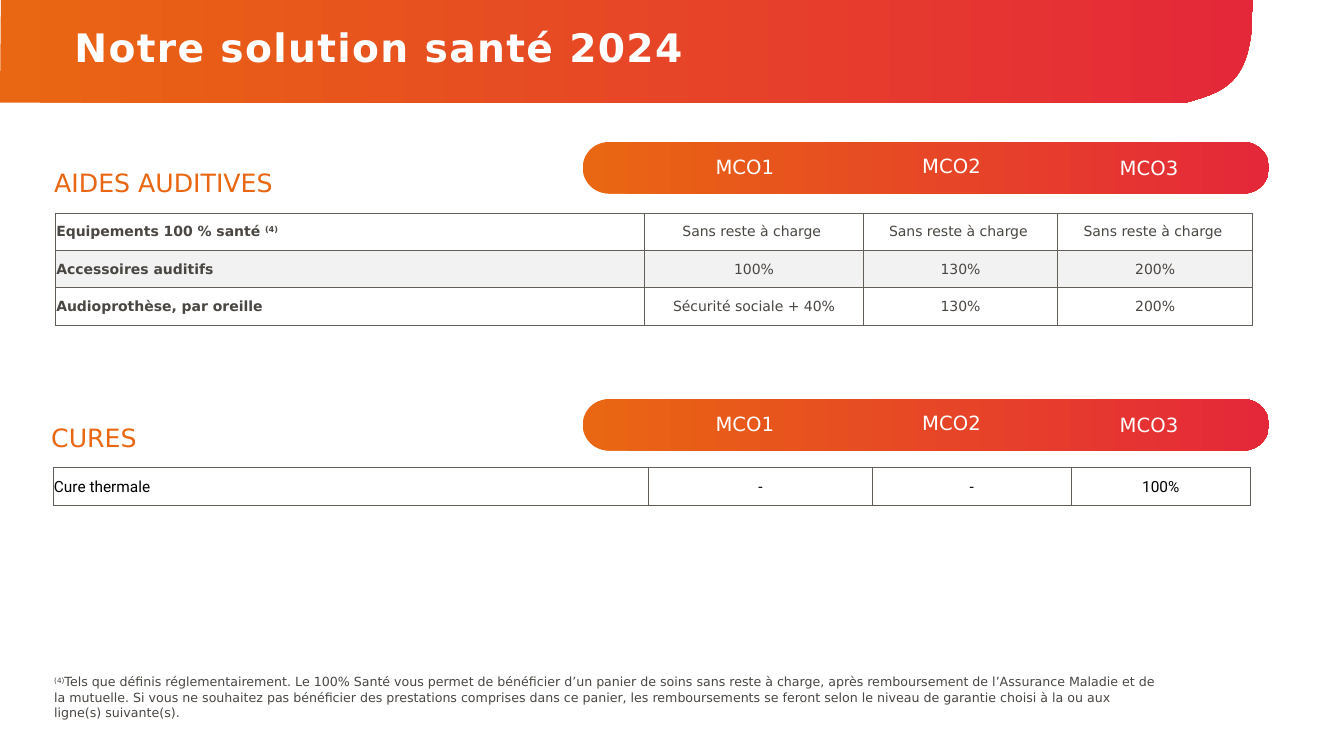
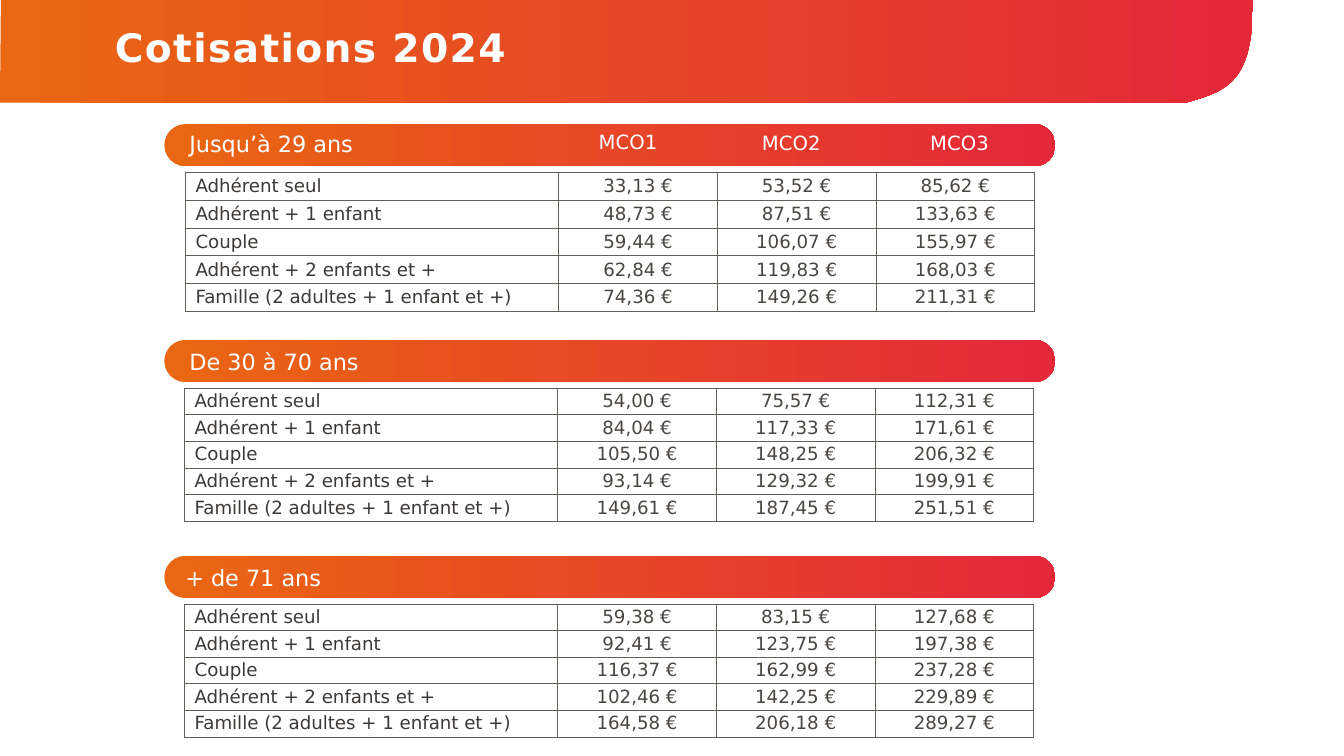
from lxml import etree
from pptx import Presentation
from pptx.dml.color import RGBColor
from pptx.enum.shapes import MSO_SHAPE
from pptx.enum.text import MSO_ANCHOR, MSO_AUTO_SIZE, PP_ALIGN
from pptx.oxml.ns import qn
from pptx.util import Pt

ROUNDED = MSO_SHAPE.ROUNDED_RECTANGLE
MIDDLE = MSO_ANCHOR.MIDDLE
NO_FIT = MSO_AUTO_SIZE.NONE
GROW = MSO_AUTO_SIZE.SHAPE_TO_FIT_TEXT
LEFT, CENTER = PP_ALIGN.LEFT, PP_ALIGN.CENTER

ORANGE = RGBColor(0xE9, 0x66, 0x12)
RED = RGBColor(0xE4, 0x28, 0x39)
WHITE = RGBColor(0xFF, 0xFF, 0xFF)
BLACK = RGBColor(0, 0, 0)
GREY = RGBColor(0xF2, 0xF2, 0xF2)
TEXT = RGBColor(0x4A, 0x46, 0x42)
DARK = RGBColor(0x3C, 0x39, 0x37)
BORDER = RGBColor(0x63, 0x5E, 0x58)

FONT = "DejaVu Sans"
NOTE_MARK = "(4)"
PLANS = ("MCO1", "MCO2", "MCO3")
PLAN_WIDTHS = (129.6, 136.8, 136.8)


class Deck:
    def __init__(self):
        self.prs = Presentation()
        self.prs.slide_width, self.prs.slide_height = Pt(960), Pt(540)
        self.layout = self.prs.slide_layouts[5]
        self.slide = None

    def add_slide(self, title, left, top, width, height):
        first = self.slide is None
        self.slide = self.prs.slides.add_slide(self.layout)
        if first:
            self.layout_band()
        sp = self.slide.shapes.title
        sp.left, sp.top, sp.width, sp.height = Pt(left), Pt(top), Pt(width), Pt(height)
        tf = sp.text_frame
        tf.word_wrap, tf.auto_size, tf.vertical_anchor = True, NO_FIT, MIDDLE
        p = tf.paragraphs[0]
        self.fill_paragraph(p, title, 28, WHITE, bold=True)
        p.line_spacing = 0.9
        p.runs[0].font._element.set("spc", "100")

    def layout_band(self):
        curve = ((846.7, 73.4), (877.7, 64.8), (895, 58.3), (895, 0))
        steps = 24
        points = []
        for i in range(steps + 1):
            t = i / steps
            weights = ((1 - t) ** 3, 3 * t * (1 - t) ** 2, 3 * t * t * (1 - t), t ** 3)
            points.append(tuple(Pt(sum(w * c[axis] for w, c in zip(weights, curve)))
                                for axis in (0, 1)))
        points.append((Pt(0.7), Pt(-0.7)))
        builder = self.slide.shapes.build_freeform(Pt(0), Pt(73.4))
        builder.add_line_segments(points, close=True)
        sp = builder.convert_to_shape()
        self.gradient(sp)
        self.layout.shapes.element.insert(2, sp.element)

    def gradient(self, sp):
        sp.shadow.inherit = False
        sp.line.fill.background()
        sp.fill.gradient()
        sp.fill.gradient_angle = 0
        for stop, color in zip(sp.fill.gradient_stops, (ORANGE, RED)):
            stop.color.rgb = color

    def fill_paragraph(self, p, text, size, color, align=LEFT, bold=False, font=FONT):
        p.alignment = align
        p.font.name, p.font.size, p.font.bold = font, Pt(size), bold
        p.font.color.rgb = color
        for part in filter(None, text.partition(NOTE_MARK)):
            r = p.add_run()
            r.text = part
            if part == NOTE_MARK:
                r.font._element.set("baseline", "30000")

    def text(self, text, left, top, width, height, size, color, align=LEFT):
        sp = self.slide.shapes.add_textbox(Pt(left), Pt(top), Pt(width), Pt(height))
        tf = sp.text_frame
        tf.word_wrap, tf.auto_size = True, GROW
        self.fill_paragraph(tf.paragraphs[0], text, size, color, align)

    def pill(self, left, top, width, height):
        sp = self.slide.shapes.add_shape(ROUNDED, Pt(left), Pt(top), Pt(width), Pt(height))
        sp.adjustments[0] = 0.5
        self.gradient(sp)

    def plans(self, lefts, tops):
        for name, left, top, width in zip(PLANS, lefts, tops, PLAN_WIDTHS):
            self.text(name, left, top, width, 24.5, 14, WHITE, CENTER)

    def table(self, rows, left, top, widths, row_height, margins, size,
              label_color=TEXT, value_color=TEXT, bold=False, font=FONT, stripe=WHITE):
        frame = self.slide.shapes.add_table(len(rows), len(widths), Pt(left), Pt(top),
                                            Pt(sum(widths)), Pt(row_height * len(rows)))
        table = frame.table
        table.first_row = table.horz_banding = False
        for column, width in zip(table.columns, widths):
            column.width = Pt(width)
        for i, values in enumerate(rows):
            table.rows[i].height = Pt(row_height)
            for j, value in enumerate(values):
                cell = table.cell(i, j)
                cell.margin_left = cell.margin_right = Pt(margins[0])
                cell.margin_top, cell.margin_bottom = Pt(margins[1]), Pt(0)
                cell.vertical_anchor = MIDDLE
                self.borders(cell)
                cell.fill.solid()
                cell.fill.fore_color.rgb = stripe if i % 2 else WHITE
                self.fill_paragraph(cell.text_frame.paragraphs[0], value, size,
                                    value_color if j else label_color,
                                    CENTER if j else LEFT, bold and j == 0, font)

    def borders(self, cell):
        tc_pr = cell._tc.get_or_add_tcPr()
        for side in ("a:lnL", "a:lnR", "a:lnT", "a:lnB"):
            ln = etree.SubElement(tc_pr, qn(side), w=str(Pt(0.5)))
            fill = etree.SubElement(ln, qn("a:solidFill"))
            etree.SubElement(fill, qn("a:srgbClr"), val=str(BORDER))


def health_slide(deck):
    deck.add_slide("Notre solution santé 2024", 46, 9.4, 746.6, 52.6)
    for top in (101.5, 285.1):
        deck.pill(416.2, top, 490.3, 36.7)
        deck.plans((467.3, 611.3, 752.4), (top + 5.8, top + 5.1, top + 6.5))
    deck.text("AIDES AUDITIVES", 31.7, 115.9, 280.8, 28.8, 18, ORANGE)
    covered = "Sans reste à charge "
    deck.table([("Equipements 100 % santé (4)", covered, covered, covered),
                ("Accessoires auditifs", "100%", "130%", "200%"),
                ("Audioprothèse, par oreille", "Sécurité sociale + 40%", "130%", "200%")],
               39.5, 152.2, (420.8, 156.6, 138.6, 139.3), 26.65, (0.72, 0.72), 10,
               bold=True, stripe=GREY)
    deck.text("CURES", 29.5, 298.1, 280.8, 28.8, 18, ORANGE)
    deck.table([("Cure thermale", "-", "-", "100%")],
               37.8, 333.8, (425.4, 160, 142.1, 127.9), 27, (0.72, 0.72), 11,
               BLACK, BLACK, font="Roboto")
    deck.text("(4)Tels que définis réglementairement. Le 100% Santé vous permet de bénéficier "
              "d’un panier de soins sans reste à charge, après remboursement de l’Assurance "
              "Maladie et de la mutuelle. Si vous ne souhaitez pas bénéficier des prestations "
              "comprises dans ce panier, les remboursements se feront selon le niveau de "
              "garantie choisi à la ou aux ligne(s) suivante(s).",
              31.7, 478.1, 801.4, 40.3, 9, TEXT)


def rates_slide(deck):
    deck.add_slide("Cotisations 2024", 74.9, -16.6, 653.8, 104.4)
    members = ("Adhérent seul", "Adhérent + 1 enfant", "Couple",
               "Adhérent + 2 enfants et +", "Famille (2 adultes + 1 enfant et +)")
    groups = (
        ("Jusqu’à 29 ans", 128.2, 0.7, 132.5, 19.9,
         (("33,13", "53,52", "85,62"), ("48,73", "87,51", "133,63"),
          ("59,44", "106,07", "155,97"), ("62,84", "119,83", "168,03"),
          ("74,36", "149,26", "211,31"))),
        ("De 30 à 70 ans", 128.2, 2.2, 131.8, 19,
         (("54,00", "75,57", "112,31"), ("84,04", "117,33", "171,61"),
          ("105,50", "148,25", "206,32"), ("93,14", "129,32", "199,91"),
          ("149,61", "187,45", "251,51"))),
        ("+ de 71 ans", 125.3, 2.2, 131.8, 19,
         (("59,38", "83,15", "127,68"), ("92,41", "123,75", "197,38"),
          ("116,37", "162,99", "237,28"), ("102,46", "142,25", "229,89"),
          ("164,58", "206,18", "289,27"))),
    )
    for i, (age, age_left, age_drop, table_left, row_height, rates) in enumerate(groups):
        top = 88.6 + 154.2 * i
        deck.pill(117.4, top, 636.5, 30.2)
        deck.text(age, age_left, top + age_drop, 170.6, 26.6, 16, WHITE)
        rows = [(member, *(f"{rate} €" for rate in line))
                for member, line in zip(members, rates)]
        deck.table(rows, table_left, top + 34.4, (266.6, 113.3, 113.3, 113.3),
                   row_height, (7.2, 0), 13, label_color=DARK)
    deck.plans((383.8, 496.8, 617), (89.3, 90, 90))


def main():
    deck = Deck()
    health_slide(deck)
    rates_slide(deck)
    deck.prs.save("out.pptx")


if __name__ == "__main__":
    main()
